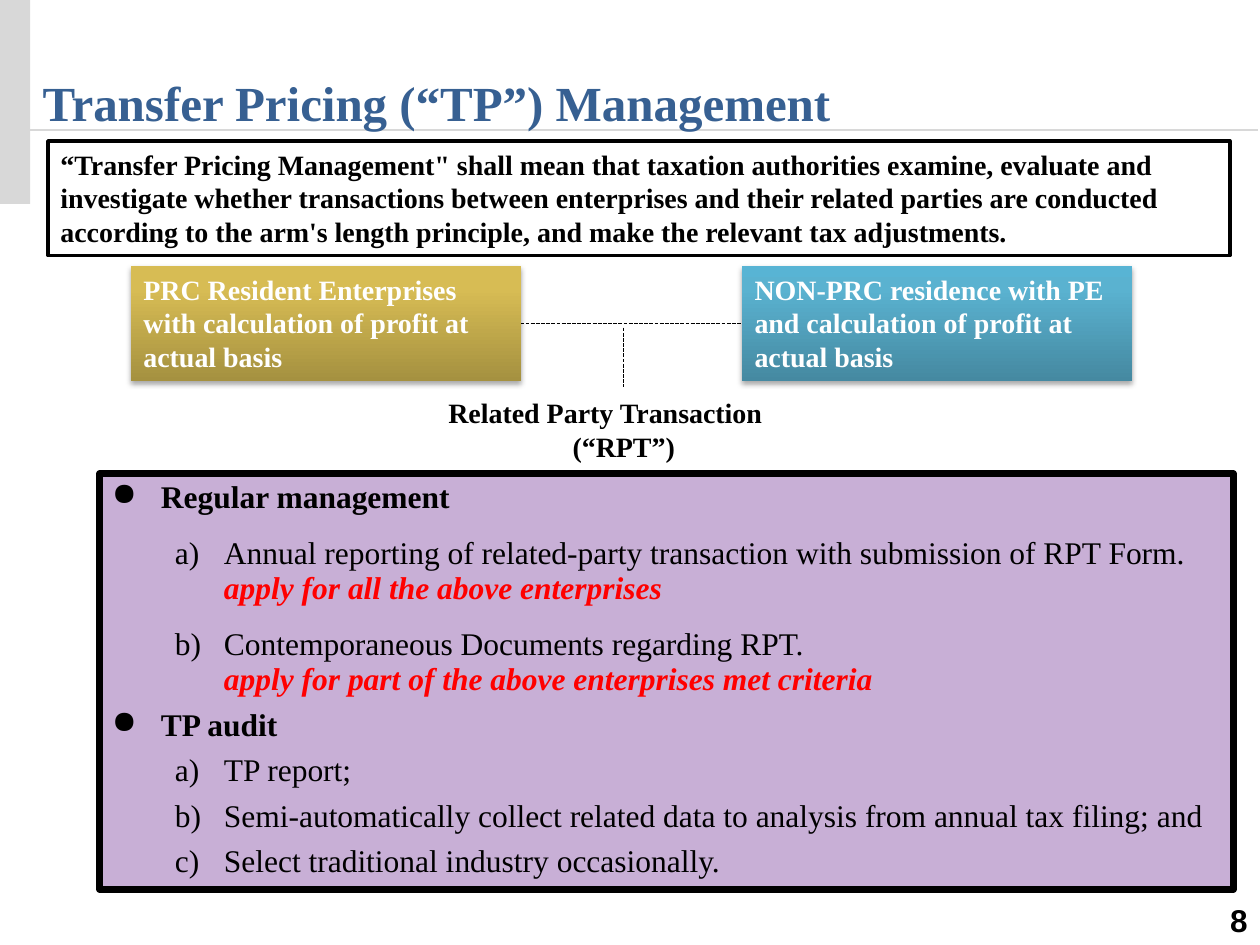
from copy import deepcopy

from lxml.etree import SubElement
from pptx import Presentation
from pptx.dml.color import RGBColor
from pptx.enum.dml import MSO_LINE
from pptx.enum.shapes import MSO_CONNECTOR, MSO_SHAPE
from pptx.enum.text import MSO_ANCHOR, PP_ALIGN as ALIGN
from pptx.oxml.ns import qn
from pptx.util import Pt

BLACK = RGBColor(0, 0, 0)
WHITE = RGBColor(255, 255, 255)
RED = RGBColor(255, 0, 0)
GREY = RGBColor(0xD8, 0xD8, 0xD8)
BLUE = RGBColor(0x37, 0x60, 0x92)
LILAC = RGBColor(0xC8, 0xAF, 0xD6)
GOLDS = [RGBColor(0xA5, 0x91, 0x40), RGBColor(0xD7, 0xBC, 0x54), RGBColor(0xDA, 0xBF, 0x52)]
TEALS = [RGBColor(0x45, 0x89, 0xA1), RGBColor(0x5A, 0xB2, 0xD0), RGBColor(0x58, 0xB4, 0xD4)]
SERIF = "Times New Roman"

deck = Presentation()
deck.slide_width, deck.slide_height = Pt(720), Pt(540)
page = deck.slides.add_slide(deck.slide_layouts[6])


def add_box(place, fill=None, line=None, anchor=MSO_ANCHOR.TOP):
    """Add a rectangle; without a fill or line it is a plain text box."""
    lengths = [Pt(value) for value in place]
    if fill is None:
        box = page.shapes.add_textbox(*lengths)
    else:
        box = page.shapes.add_shape(MSO_SHAPE.RECTANGLE, *lengths)
        box.shadow.inherit = False
        box.fill.solid()
        box.fill.fore_color.rgb = fill
        if line:
            box.line.color.rgb = BLACK
            box.line.width = Pt(line)
        else:
            box.line.fill.background()
    box.text_frame.word_wrap = True
    box.text_frame.vertical_anchor = anchor
    return box


def write(box, lines, size, color=BLACK, align=ALIGN.LEFT, font=SERIF):
    """Write bold paragraphs that share one font."""
    for index, line in enumerate(lines):
        para = box.text_frame.paragraphs[0] if index == 0 else box.text_frame.add_paragraph()
        para.text = line
        para.alignment = align
        para.font.size, para.font.name, para.font.bold = Pt(size), font, True
        para.font.color.rgb = color


# Side bar, title and the lines of the diagram
add_box((0, 0, 17.3, 116.6), GREY)
for x1, y1, x2, y2, color, width, dash in [
    (3, 74.2, 718.6, 74.2, GREY, 1, None),
    (297.4, 185, 424, 185, BLACK, 0.75, MSO_LINE.SQUARE_DOT),
    (356.4, 187.2, 356.4, 221, BLACK, 0.75, MSO_LINE.SQUARE_DOT),
]:
    rule = page.shapes.add_connector(MSO_CONNECTOR.STRAIGHT, Pt(x1), Pt(y1), Pt(x2), Pt(y2))
    rule.line.color.rgb = color
    rule.line.width = Pt(width)
    if dash:
        rule.line.dash_style = dash
    SubElement(rule._element.spPr, qn("a:effectLst"))

title = add_box((17.3, 10, 612, 96), anchor=MSO_ANCHOR.MIDDLE)
write(title, ["Transfer Pricing (“TP”) Management"], 28, BLUE)

# Definition
definition = add_box((27.4, 80.6, 675.4, 65.5), WHITE, 2)
write(definition, [
    "“Transfer Pricing Management\" shall mean that taxation authorities examine, evaluate "
    "and investigate whether transactions between enterprises and their related parties are "
    "conducted according to the arm's length principle, and make the relevant tax adjustments."
], 16)

# The two kinds of enterprise
for left, colors, words in [
    (74.9, GOLDS, "PRC Resident Enterprises with calculation of profit at actual basis"),
    (424.1, TEALS, "NON-PRC residence with PE and calculation of profit at actual basis"),
]:
    party = add_box((left, 152, 222.8, 65.5), WHITE)
    party.fill.gradient()
    party.fill.gradient_angle = 90
    stop_list = party._element.spPr.find(".//" + qn("a:gsLst"))
    stop_list.append(deepcopy(stop_list[-1]))
    for stop, position, color in zip(party.fill.gradient_stops, (0, 0.8, 1), colors):
        stop.position = position
        stop.color.rgb = color
    effects = party._element.spPr.find(qn("a:effectLst"))
    shadow = SubElement(effects, qn("a:outerShdw"), blurRad=str(Pt(3.1)), dist=str(Pt(1.8)),
                        dir="5400000", rotWithShape="0")
    tone = SubElement(shadow, qn("a:srgbClr"), val="000000")
    SubElement(tone, qn("a:alpha"), val="35000")
    write(party, [words], 16, WHITE)

# Label under the link
label = add_box((249.1, 222.5, 214.6, 46))
write(label, ["Related Party Transaction", "(“RPT”)"], 16)
label.text_frame.paragraphs[1].alignment = ALIGN.CENTER

# Management list: level, space before, words, remark
panel = add_box((56.9, 270.7, 648, 237.6), LILAC, 3.75)
items = [
    (0, 0, "Regular management", None),
    (1, 12, "Annual reporting of related-party transaction with submission of RPT Form.",
     "apply for all the above enterprises"),
    (1, 12, "Contemporaneous Documents regarding RPT.",
     "apply for part of the above enterprises met criteria"),
    (0, 6, "TP audit", None),
    (1, 6, "TP report;", None),
    (1, 6, "Semi-automatically collect related data to analysis from annual tax filing; and", None),
    (1, 6, "Select traditional industry occasionally.", None),
]
for index, (level, gap, words, remark) in enumerate(items):
    para = panel.text_frame.paragraphs[0] if index == 0 else panel.text_frame.add_paragraph()
    para.level = level
    para.alignment = ALIGN.LEFT
    para.line_spacing, para.space_before = Pt(20), Pt(gap)
    props = para._p.get_or_add_pPr()
    props.set("marL", str(Pt(28 + 36 * level)))
    props.set("indent", str(Pt(-28)))
    SubElement(SubElement(props, qn("a:buClr")), qn("a:srgbClr"), val="000000")
    if level:
        SubElement(props, qn("a:buAutoNum"), type="alphaLcParenR")
    else:
        SubElement(props, qn("a:buChar"), char="●")
    para.font.size, para.font.name = Pt(18), SERIF
    para.font.bold = level == 0
    para.font.color.rgb = BLACK
    para.add_run().text = words
    if remark:
        para.add_line_break()
        span = para.add_run()
        span.text = remark
        span.font.bold = span.font.italic = True
        span.font.color.rgb = RED

# Page number
number = add_box((599, 511.2, 121, 28.8))
write(number, ["8"], 18, align=ALIGN.RIGHT, font="Arial")

deck.save("out.pptx")
